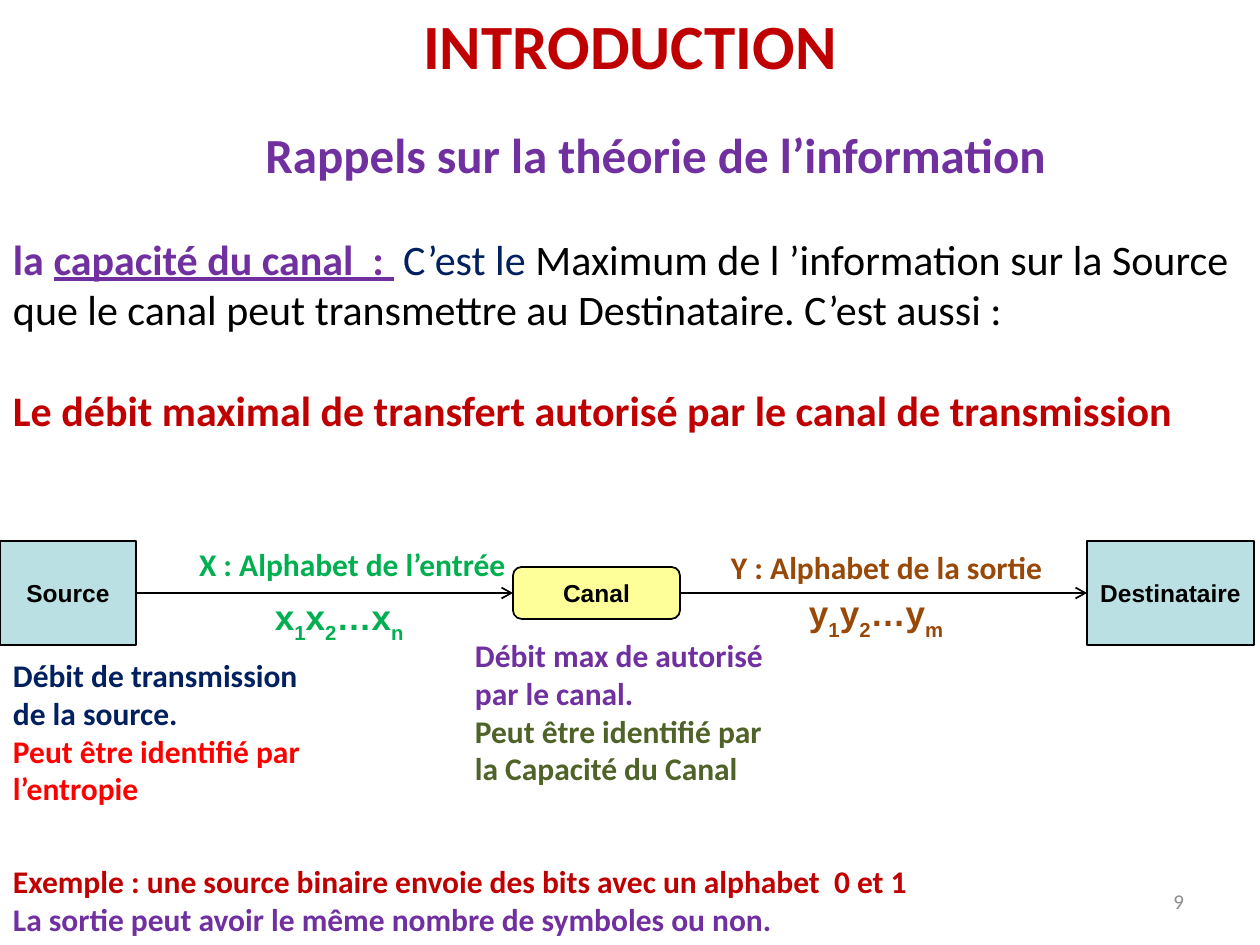
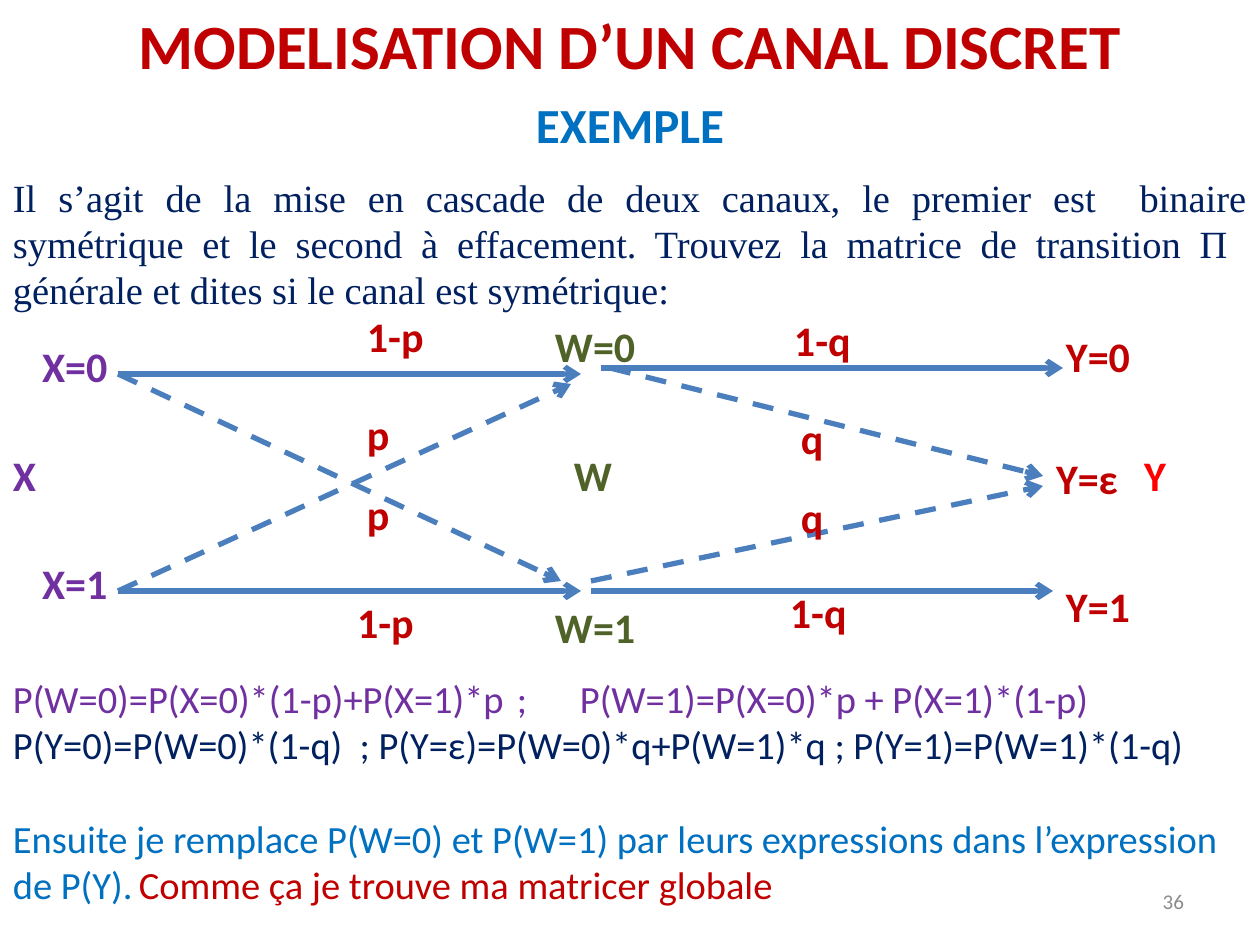
from dataclasses import dataclass
from typing import Optional

from lxml.etree import SubElement
from pptx import Presentation
from pptx.dml.color import RGBColor
from pptx.enum.dml import MSO_LINE
from pptx.enum.shapes import MSO_CONNECTOR, MSO_SHAPE
from pptx.enum.text import MSO_ANCHOR, MSO_AUTO_SIZE, PP_ALIGN
from pptx.oxml.ns import qn
from pptx.util import Emu, Pt

PIXEL = 914400 / 126
PAGE_WIDTH, PAGE_HEIGHT = 1260, 945
RED, BRIGHT_RED, PURPLE, NAVY = "C00000", "FF0000", "7030A0", "002060"
BLUE, GREEN, OLIVE, BROWN = "0070C0", "00B050", "4F6228", "984807"
BLACK, GRAY, STEEL = "000000", "8C8C8C", "4B7EBC"
PALE_BLUE, PALE_YELLOW = "BBE0E3", "FFFF99"
WIDE_INSET, NARROW_INSET = (13, 6), (9, 4)


@dataclass(frozen=True)
class Span:
    text: str
    color: str
    bold: bool = True
    underline: bool = False
    subscript: bool = False


@dataclass(frozen=True)
class Para:
    spans: tuple[Span, ...]
    align: PP_ALIGN = PP_ALIGN.LEFT
    before: int = 0
    tabs: tuple[int, ...] = ()


@dataclass(frozen=True)
class Area:
    left: int
    top: int
    width: int
    height: int


@dataclass(frozen=True)
class Label:
    area: Area
    paras: tuple[Para, ...]
    size: int
    font: str = "Calibri"
    inset: tuple[int, int] = WIDE_INSET
    anchor: MSO_ANCHOR = MSO_ANCHOR.TOP


@dataclass(frozen=True)
class Block:
    name: str
    area: Area
    outline: MSO_SHAPE
    fill: str
    weight: float


@dataclass(frozen=True)
class Arrow:
    start: tuple[int, int]
    end: tuple[int, int]
    dashed: bool = False


def px(length: float) -> Emu:
    return Emu(round(length * PIXEL))


def rgb(color: str) -> RGBColor:
    return RGBColor.from_string(color)


def line(text: str, color: str, align: PP_ALIGN = PP_ALIGN.LEFT,
         bold: bool = True, before: int = 0, tabs: tuple[int, ...] = ()) -> Para:
    return Para((Span(text, color, bold),), align, before, tabs)


def format_para(paragraph, para: Para, label: Label, plain: bool) -> None:
    paragraph.alignment = para.align
    paragraph.space_before = Pt(para.before)
    properties = paragraph._p.get_or_add_pPr()
    if plain:
        properties.set("marL", "0")
        properties.set("indent", "0")
        SubElement(properties, qn("a:buNone"))
    if para.tabs:
        stops = SubElement(properties, qn("a:tabLst"))
        for position in para.tabs:
            SubElement(stops, qn("a:tab"), pos=str(px(position)), algn="l")
    for span in para.spans:
        run = paragraph.add_run()
        run.text = span.text
        run.font.name = label.font
        run.font.size = Pt(label.size)
        run.font.bold = span.bold
        run.font.color.rgb = rgb(span.color)
        if span.underline:
            run.font.underline = True
        if span.subscript:
            run._r.get_or_add_rPr().set("baseline", "-30000")


def write(box, label: Label) -> None:
    frame = box.text_frame
    frame.word_wrap = True
    frame.auto_size = MSO_AUTO_SIZE.NONE
    frame.vertical_anchor = label.anchor
    frame.margin_left = frame.margin_right = px(label.inset[0])
    frame.margin_top = frame.margin_bottom = px(label.inset[1])
    for index, para in enumerate(label.paras):
        paragraph = frame.add_paragraph() if index else frame.paragraphs[0]
        format_para(paragraph, para, label, box.is_placeholder)


def place(box, label: Label) -> None:
    area = label.area
    box.left, box.top = px(area.left), px(area.top)
    box.width, box.height = px(area.width), px(area.height)
    write(box, label)


def add_label(page, label: Label) -> None:
    area = label.area
    box = page.shapes.add_textbox(px(area.left), px(area.top), px(area.width), px(area.height))
    write(box, label)


def add_block(page, block: Block):
    area = block.area
    shape = page.shapes.add_shape(
        block.outline, px(area.left), px(area.top), px(area.width), px(area.height))
    shape.shadow.inherit = False
    shape.fill.solid()
    shape.fill.fore_color.rgb = rgb(block.fill)
    shape.line.color.rgb = rgb(BLACK)
    shape.line.width = Pt(block.weight)
    write(shape, Label(area, (line(block.name, BLACK, PP_ALIGN.CENTER),), 14, "Arial",
                       NARROW_INSET, MSO_ANCHOR.MIDDLE))
    return shape


def add_arrow(page, arrow: Arrow, color: str, weight: float):
    connector = page.shapes.add_connector(
        MSO_CONNECTOR.STRAIGHT, *(px(value) for value in arrow.start + arrow.end))
    connector.line.color.rgb = rgb(color)
    connector.line.width = Pt(weight)
    if arrow.dashed:
        connector.line.dash_style = MSO_LINE.DASH
    SubElement(connector.line._get_or_add_ln(), qn("a:tailEnd"), type="arrow")
    SubElement(connector._element.spPr, qn("a:effectLst"))
    return connector


def add_page(deck, title: str, number: str, body: Label):
    page = deck.slides.add_slide(deck.slide_layouts[1])
    place(page.shapes.title,
          Label(Area(0, 0, PAGE_WIDTH, 89), (line(title, RED, PP_ALIGN.CENTER),), 36))
    place(page.placeholders[1], body)
    add_label(page, Label(Area(903, 876, 294, 50),
                          (line(number, GRAY, PP_ALIGN.RIGHT, bold=False),), 12,
                          anchor=MSO_ANCHOR.MIDDLE))
    return page


def symbols(letter: str, last: str, color: str) -> Para:
    parts = (letter, "1", letter, "2", "…" + letter, last)
    return Para(tuple(Span(text, color, subscript=index % 2 == 1)
                      for index, text in enumerate(parts)))


def build_introduction(deck) -> None:
    body = Label(Area(0, 227, PAGE_WIDTH, 267), (
        Para((Span("la ", PURPLE),
              Span("capacité du canal  : ", PURPLE, underline=True),
              Span(" C’est le ", NAVY, bold=False),
              Span("Maximum de l ’information sur la Source que le canal peut "
                   "transmettre au Destinataire. C’est aussi :", BLACK, bold=False))),
        line("Le débit maximal de transfert autorisé par le canal de transmission",
             RED, before=29)), 24)
    page = add_page(deck, "INTRODUCTION", "9", body)

    chain = [add_block(page, block) for block in (
        Block("Source", Area(0, 541, 136, 104), MSO_SHAPE.RECTANGLE, PALE_BLUE, 0.75),
        Block("Canal", Area(513, 567, 167, 52),
              MSO_SHAPE.FLOWCHART_ALTERNATE_PROCESS, PALE_YELLOW, 1),
        Block("Destinataire", Area(1087, 541, 167, 104), MSO_SHAPE.RECTANGLE, PALE_BLUE, 0.75))]
    for sender, receiver in zip(chain, chain[1:]):
        connector = add_arrow(page, Arrow((0, 0), (0, 0)), BLACK, 1)
        connector.begin_connect(sender, 3)
        connector.end_connect(receiver, 1)

    for label in (
        Label(Area(178, 118, 955, 72),
              (line("Rappels sur la théorie de l’information", PURPLE, PP_ALIGN.CENTER),), 28),
        Label(Area(186, 539, 344, 50), (line("X : Alphabet de l’entrée", GREEN),), 18),
        Label(Area(718, 542, 344, 50), (line("Y : Alphabet de la sortie", BROWN),), 18),
        Label(Area(266, 591, 178, 63), (symbols("x", "n", GREEN),), 20, "Arial", NARROW_INSET),
        Label(Area(800, 588, 194, 52), (symbols("y", "m", BROWN),), 20, "Arial", NARROW_INSET),
        Label(Area(0, 650, 315, 165), (
            line("Débit de transmission de la source.", NAVY),
            line("Peut être identifié par l’entropie", BRIGHT_RED)), 18),
        Label(Area(462, 630, 315, 165), (
            line("Débit max de autorisé par le canal.", PURPLE),
            line("Peut être identifié par la Capacité du Canal", OLIVE)), 18),
        Label(Area(0, 856, 1152, 89), (
            line("Exemple : une source binaire envoie des bits avec un alphabet  0 et 1",
                 RED, PP_ALIGN.JUSTIFY),
            line("La sortie peut avoir le même nombre de symboles ou non.",
                 PURPLE, PP_ALIGN.JUSTIFY)), 18),
    ):
        add_label(page, label)


def build_cascade(deck) -> None:
    body = Label(Area(0, 669, PAGE_WIDTH, 246), (
        line("P(W=0)=P(X=0)*(1-p)+P(X=1)*p\t;\tP(W=1)=P(X=0)*p + P(X=1)*(1-p)",
             PURPLE, bold=False, tabs=(518, 544)),
        line("P(Y=0)=P(W=0)*(1-q)  ; P(Y=ε)=P(W=0)*q+P(W=1)*q ; P(Y=1)=P(W=1)*(1-q)",
             NAVY, bold=False),
        Para((Span("Ensuite je remplace P(W=0) et P(W=1) par leurs expressions dans "
                   "l’expression de P(Y).\t", BLUE, bold=False),
              Span("Comme ça je trouve ma matricer globale", RED, bold=False)),
             before=27, tabs=(180,))), 22)
    page = add_page(deck, "MODELISATION D’UN CANAL DISCRET", "36", body)

    add_label(page, Label(Area(0, 88, PAGE_WIDTH, 72),
                          (line("EXEMPLE", BLUE, PP_ALIGN.CENTER),), 28))
    add_label(page, Label(Area(0, 168, PAGE_WIDTH, 152), (
        line("Il s’agit de la mise en cascade de deux canaux, le premier est  binaire "
             "symétrique et le second à effacement. Trouvez la matrice de transition Π  "
             "générale et dites si le canal est symétrique:",
             NAVY, PP_ALIGN.JUSTIFY, bold=False),), 22, "Times New Roman"))

    for arrow in (
        Arrow((118, 374), (581, 374)),
        Arrow((118, 591), (581, 591)),
        Arrow((118, 591), (571, 384), dashed=True),
        Arrow((118, 374), (561, 581), dashed=True),
        Arrow((601, 368), (1063, 368)),
        Arrow((591, 591), (1053, 591)),
        Arrow((591, 581), (1043, 486), dashed=True),
        Arrow((610, 368), (1043, 476), dashed=True),
    ):
        add_arrow(page, arrow, STEEL, 3)

    states_and_odds: dict[str, tuple[tuple[str, int, int], ...]] = {
        PURPLE: (("X=0", 29, 335), ("X", 0, 444), ("X=1", 29, 552)),
        OLIVE: (("W=0", 542, 315), ("W", 561, 444), ("W=1", 542, 596)),
        BRIGHT_RED: (("Y", 1131, 444),),
        RED: (("Y=0", 1053, 325), ("Y=ε", 1043, 447), ("Y=1", 1053, 575),
              ("1-p", 354, 305), ("p", 354, 403), ("p", 354, 483), ("1-p", 344, 591),
              ("1-q", 781, 309), ("q", 788, 407), ("q", 788, 486), ("1-q", 777, 581)),
    }
    for color, entries in states_and_odds.items():
        for text, left, top in entries:
            add_label(page, Label(Area(left, top, 120, 63), (line(text, color),), 24))


def main() -> None:
    deck = Presentation()
    deck.slide_width, deck.slide_height = px(PAGE_WIDTH), px(PAGE_HEIGHT)
    build_introduction(deck)
    build_cascade(deck)
    deck.save("out.pptx")


if __name__ == "__main__":
    main()
